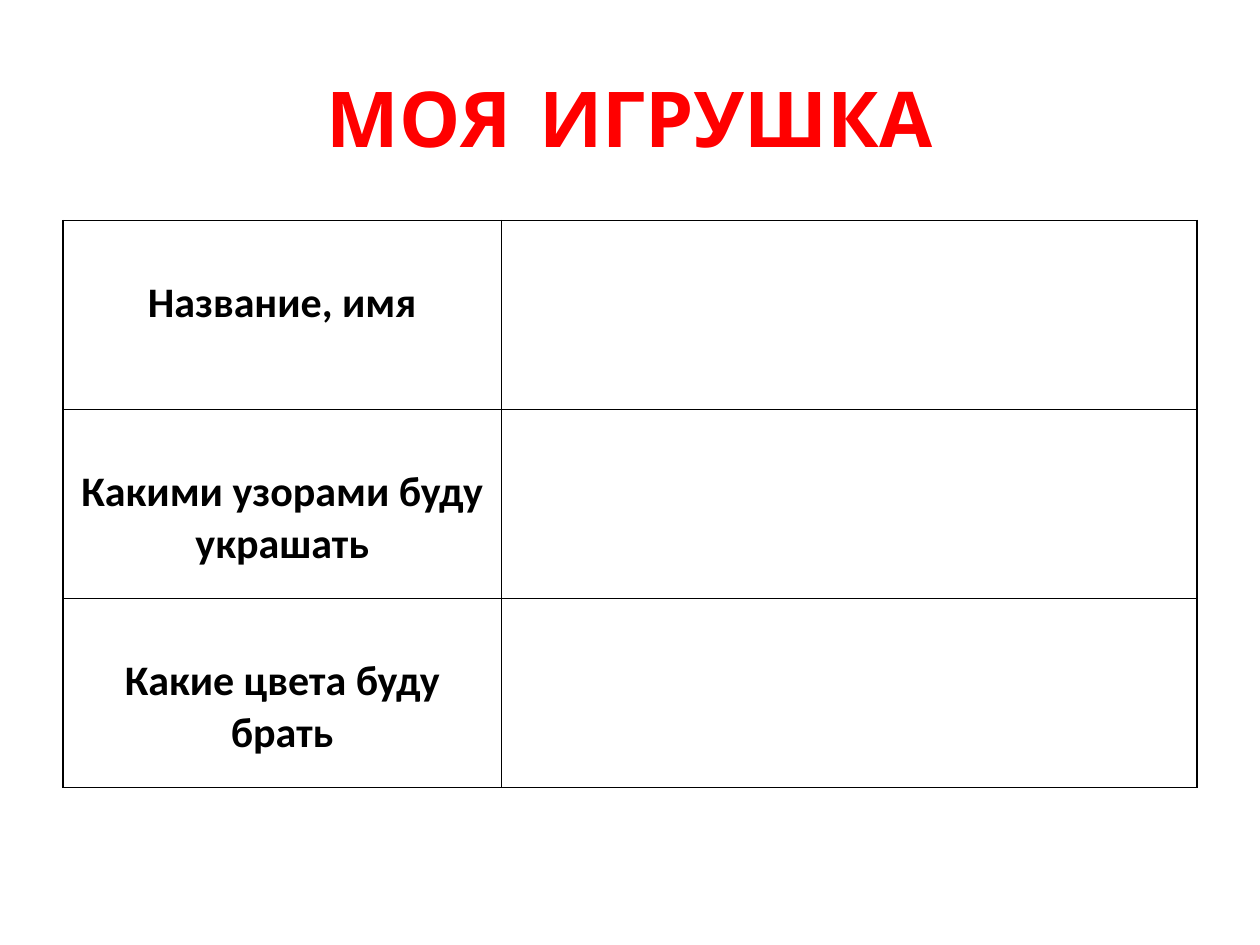
import pptx
import pptx.util
import pptx.dml.color
import pptx.enum.text
import pptx.oxml
import pptx.oxml.ns
from lxml import etree

Pt = pptx.util.Pt
RGBColor = pptx.dml.color.RGBColor
CENTER = pptx.enum.text.PP_ALIGN.CENTER
MIDDLE = pptx.enum.text.MSO_ANCHOR.MIDDLE

# Content
TITLE = "МОЯ ИГРУШКА"
QUESTIONS = [
    "Название, имя",
    "Какими узорами буду украшать",
    "Какие цвета буду брать",
]

# Format
RED = RGBColor(0xFF, 0x00, 0x00)
GREEN = RGBColor(0x00, 0x66, 0x00)
BLACK = RGBColor(0x00, 0x00, 0x00)
TITLE_FONT = {"name": "Comic Neue", "size": Pt(44), "bold": True}
QUESTION_FONT = {"name": "Calibri", "size": Pt(24), "bold": True}
LEFT, WIDTH = 36, 648
COLUMN_WIDTHS = [250.56, 397.44]
TABLE_TOP, ROW_HEIGHT = 126, 108
QUESTION_MARGIN = 32.9  # one text line below the usual cell margin


def write(frame, text, font, color):
    para = frame.paragraphs[0]
    para.alignment = CENTER
    span = para.add_run()
    span.text = text
    for name, value in font.items():
        setattr(span.font, name, value)
    span.font.color.rgb = color
    return span


def make_line(tag, color, width):
    line = etree.Element(pptx.oxml.ns.qn(tag), w=str(Pt(width)))
    fill = etree.SubElement(line, pptx.oxml.ns.qn("a:solidFill"))
    etree.SubElement(fill, pptx.oxml.ns.qn("a:srgbClr"), val=str(color))
    return line


def add_borders(cell):
    properties = cell._tc.get_or_add_tcPr()
    for index, side in enumerate("LRTB"):
        properties.insert(index, make_line(f"a:ln{side}", BLACK, 1))


def main():
    deck = pptx.Presentation()
    deck.slide_width, deck.slide_height = Pt(720), Pt(540)
    page = deck.slides.add_slide(deck.slide_layouts[5])

    # Title
    title = page.shapes.title
    place = {"left": LEFT, "top": 21.6, "width": WIDTH, "height": 90}
    for name, value in place.items():
        setattr(title, name, Pt(value))
    title.text_frame.vertical_anchor = MIDDLE
    span = write(title.text_frame, TITLE, TITLE_FONT, RED)
    span.font._element.insert(0, make_line("a:ln", GREEN, 0.75))

    # Table with questions on the left and room for answers on the right
    table = page.shapes.add_table(
        len(QUESTIONS), len(COLUMN_WIDTHS), Pt(LEFT), Pt(TABLE_TOP),
        Pt(WIDTH), Pt(ROW_HEIGHT * len(QUESTIONS))).table
    table.first_row = table.horz_banding = False
    for column, width in zip(table.columns, COLUMN_WIDTHS):
        column.width = Pt(width)
    for row, question in zip(table.rows, QUESTIONS):
        row.height = Pt(ROW_HEIGHT)
        for cell in row.cells:
            cell.fill.background()
            add_borders(cell)
        cell = row.cells[0]
        cell.margin_top = Pt(QUESTION_MARGIN)
        write(cell.text_frame, question, QUESTION_FONT, BLACK)

    deck.save("out.pptx")


if __name__ == "__main__":
    main()
